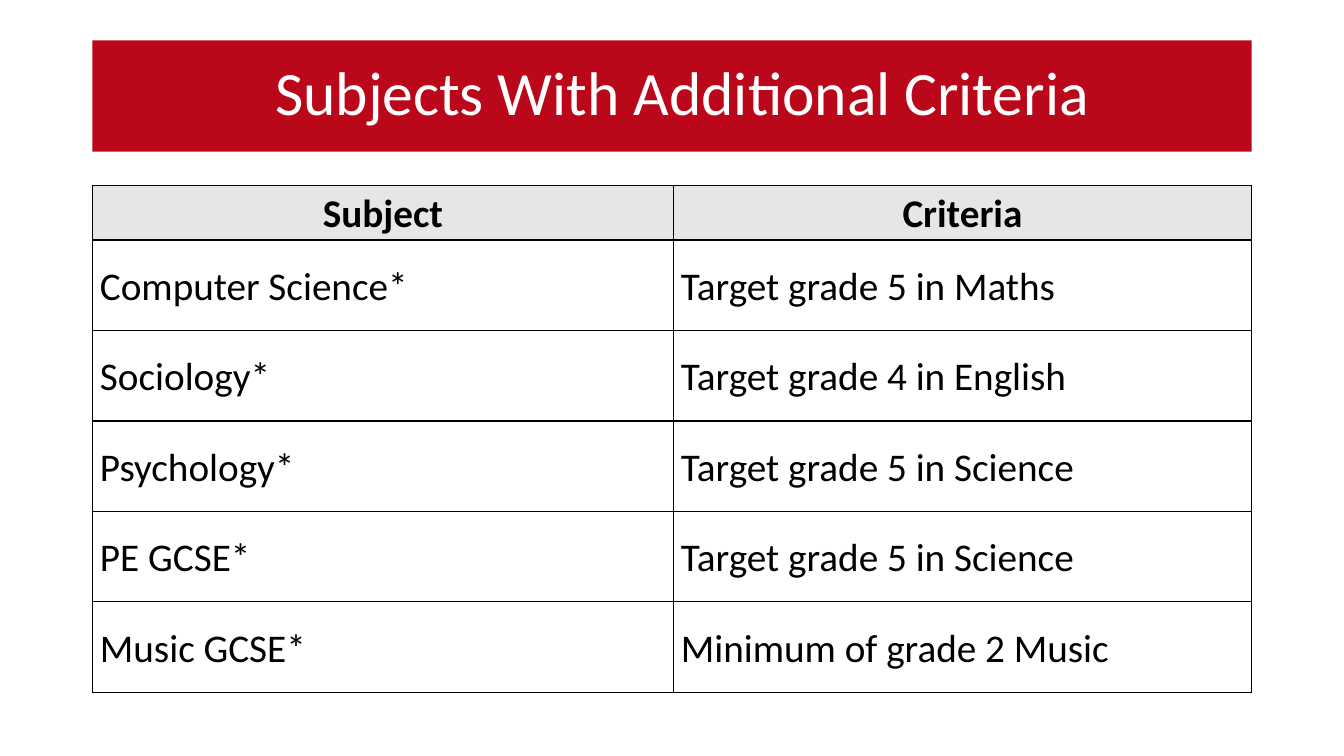
from dataclasses import dataclass

from lxml.etree import SubElement
from pptx import Presentation
from pptx.dml.color import RGBColor
from pptx.enum.text import MSO_ANCHOR, MSO_AUTO_SIZE, PP_ALIGN
from pptx.oxml.ns import qn
from pptx.util import Cm, Pt

# Content
TITLE = "Subjects With Additional Criteria"
HEADER = ("Subject", "Criteria")
SUBJECTS = [
    ("Computer Science*", "Target grade 5 in Maths"),
    ("Sociology*", "Target grade 4 in English"),
    ("Psychology*", "Target grade 5 in Science"),
    ("PE GCSE*", "Target grade 5 in Science"),
    ("Music GCSE*", "Minimum of grade 2 Music"),
]


@dataclass(frozen=True)
class Theme:
    font: str = "Calibri"
    title_size: int = 44
    table_size: int = 28
    banner: str = "BA0719"
    title_text: str = "FFFFFF"
    header_fill: str = "E7E6E6"
    table_text: str = "000000"
    border: str = "000000"
    border_width: int = 1


THEME = Theme()

# Layout
LEFT = Cm(2.33)
TITLE_TOP, TITLE_HEIGHT = Cm(1.02), Cm(2.8)
TABLE_TOP = Cm(4.67)
COLUMN_WIDTHS = (Cm(14.64), Cm(14.57))
HEADER_HEIGHT, SUBJECT_HEIGHT = Cm(1.38), Cm(2.28)
WIDTH = sum(COLUMN_WIDTHS)


def write(text_frame, text, size, color, spacing, alignment, bold=False):
    paragraph = text_frame.paragraphs[0]
    paragraph.alignment = alignment
    paragraph.line_spacing = spacing
    run = paragraph.add_run()
    run.text = text
    run.font.name = THEME.font
    run.font.size = Pt(size)
    run.font.bold = bold
    run.font.color.rgb = RGBColor.from_string(color)


def add_borders(cell):
    properties = cell._tc.get_or_add_tcPr()
    for position, side in enumerate(("a:lnL", "a:lnR", "a:lnT", "a:lnB")):
        line = SubElement(properties, qn(side), w=str(Pt(THEME.border_width)))
        fill = SubElement(line, qn("a:solidFill"))
        SubElement(fill, qn("a:srgbClr"), val=THEME.border)
        properties.insert(position, line)


def add_title(slide):
    title = slide.shapes.title
    title.left, title.top, title.width, title.height = LEFT, TITLE_TOP, WIDTH, TITLE_HEIGHT
    title.fill.solid()
    title.fill.fore_color.rgb = RGBColor.from_string(THEME.banner)
    frame = title.text_frame
    frame.word_wrap = True
    frame.auto_size = MSO_AUTO_SIZE.NONE
    frame.vertical_anchor = MSO_ANCHOR.MIDDLE
    frame.margin_left, frame.margin_right = Cm(0.79), Cm(0.25)
    frame.margin_top = frame.margin_bottom = Cm(0.13)
    write(frame, TITLE, THEME.title_size, THEME.title_text, 0.9, PP_ALIGN.CENTER)


def add_criteria_table(slide):
    rows = [HEADER, *SUBJECTS]
    heights = [HEADER_HEIGHT] + [SUBJECT_HEIGHT] * len(SUBJECTS)
    table = slide.shapes.add_table(
        len(rows), len(HEADER), LEFT, TABLE_TOP, WIDTH, sum(heights)
    ).table
    table.horz_banding = False
    for column, width in zip(table.columns, COLUMN_WIDTHS):
        column.width = width
    for row, height, texts in zip(table.rows, heights, rows):
        row.height = height
        is_header = texts is HEADER
        for cell, text in zip(row.cells, texts):
            cell.vertical_anchor = MSO_ANCHOR.MIDDLE
            cell.margin_left = cell.margin_right = Cm(0.19)
            cell.margin_top = cell.margin_bottom = 0
            if is_header:
                cell.fill.solid()
                cell.fill.fore_color.rgb = RGBColor.from_string(THEME.header_fill)
            else:
                cell.fill.background()
            add_borders(cell)
            alignment = PP_ALIGN.CENTER if is_header else PP_ALIGN.LEFT
            write(cell.text_frame, text, THEME.table_size, THEME.table_text,
                  1.07, alignment, bold=is_header)


def main():
    presentation = Presentation()
    presentation.slide_width, presentation.slide_height = Cm(33.87), Cm(19.05)
    title_only = presentation.slide_layouts[5]
    slide = presentation.slides.add_slide(title_only)
    add_title(slide)
    add_criteria_table(slide)
    presentation.save("out.pptx")


if __name__ == "__main__":
    main()
